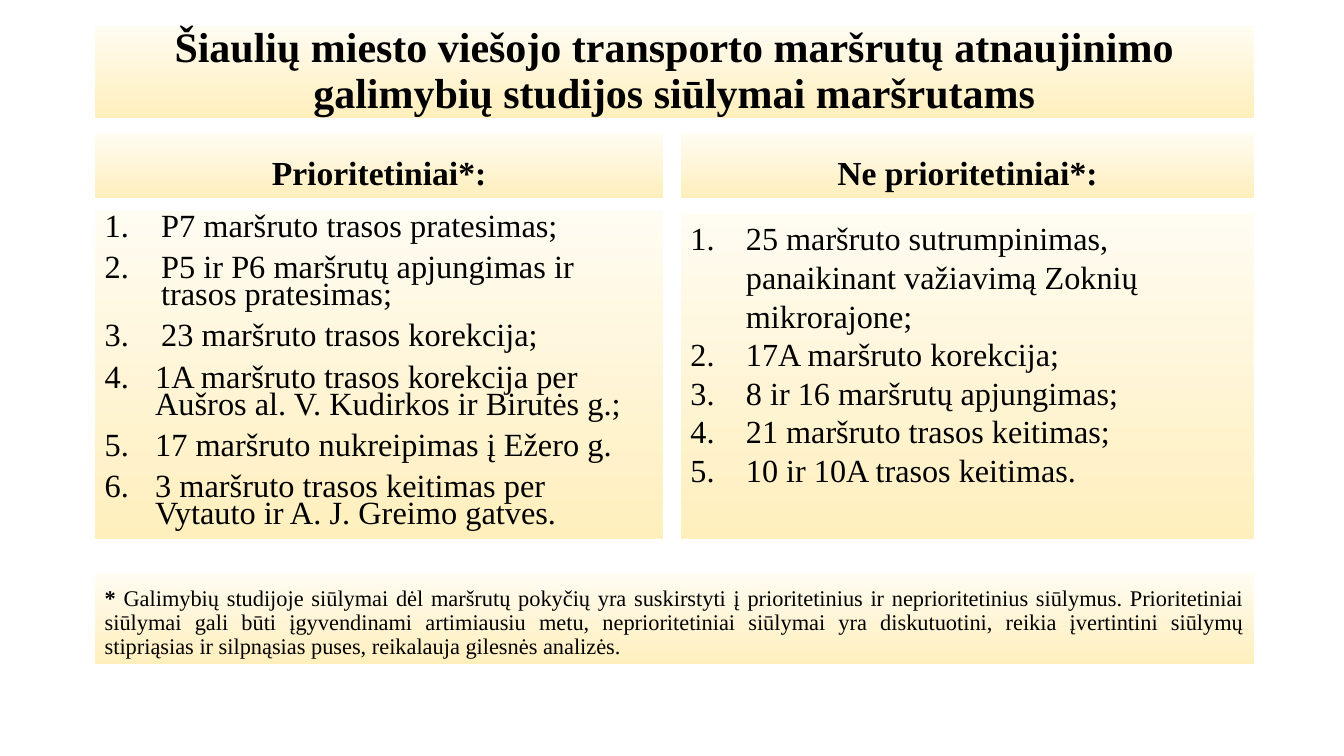
from dataclasses import dataclass

from lxml import etree
from pptx import Presentation
from pptx.dml.color import RGBColor
from pptx.enum.shapes import MSO_SHAPE
from pptx.enum.text import MSO_ANCHOR, MSO_AUTO_SIZE, PP_ALIGN
from pptx.oxml.ns import qn
from pptx.util import Inches, Pt

RECTANGLE = MSO_SHAPE.RECTANGLE
TOP, MIDDLE, BOTTOM = MSO_ANCHOR.TOP, MSO_ANCHOR.MIDDLE, MSO_ANCHOR.BOTTOM
LEFT, CENTER, JUSTIFY = PP_ALIGN.LEFT, PP_ALIGN.CENTER, PP_ALIGN.JUSTIFY
NO_AUTOFIT = MSO_AUTO_SIZE.NONE

TITLE = "Šiaulių miesto viešojo transporto maršrutų atnaujinimo galimybių studijos siūlymai maršrutams"
PRIORITY_HEADING = "Prioritetiniai*:"
PRIORITY_ROUTES = [
    ("P7 maršruto trasos pratesimas;", 0.56),
    ("P5 ir P6 maršrutų apjungimas ir trasos pratesimas;", 0.56),
    ("23 maršruto trasos korekcija;", 0.56),
    ("1A maršruto trasos korekcija per Aušros al. V. Kudirkos ir Birutės g.;", 0.5),
    ("17 maršruto nukreipimas į Ežero g.", 0.5),
    ("3 maršruto trasos keitimas per Vytauto ir A. J. Greimo gatves.", 0.5),
]
OTHER_HEADING = "Ne prioritetiniai*:"
OTHER_ROUTES = [
    ("25 maršruto sutrumpinimas, panaikinant važiavimą Zoknių mikrorajone;", 0.55),
    ("17A maršruto korekcija;", 0.55),
    ("8 ir 16 maršrutų apjungimas;", 0.55),
    ("21 maršruto trasos keitimas;", 0.55),
    ("10 ir 10A trasos keitimas.", 0.55),
]
FOOTNOTE_MARK = "* "
FOOTNOTE = (
    "Galimybių studijoje siūlymai dėl maršrutų pokyčių yra suskirstyti į prioritetinius ir "
    "neprioritetinius siūlymus. Prioritetiniai siūlymai gali būti įgyvendinami artimiausiu metu, "
    "neprioritetiniai siūlymai yra diskutuotini, reikia įvertintini siūlymų stipriąsias ir "
    "silpnąsias puses, reikalauja gilesnės analizės."
)


@dataclass(frozen=True)
class Theme:
    font: str = "Times New Roman"
    text: str = "000000"
    panel_top: str = "FFFCF2"
    panel_bottom: str = "FFEFBD"
    title: float = 30
    heading: float = 24
    priority: float = 23.1
    other: float = 23
    footnote: float = 16


THEME = Theme()


def style_panel(box, area, anchor):
    box.left, box.top, box.width, box.height = map(Inches, area)
    box.fill.gradient()
    box.fill.gradient_angle = 270
    for stop, color in zip(box.fill.gradient_stops, (THEME.panel_top, THEME.panel_bottom)):
        stop.color.rgb = RGBColor.from_string(color)
    box.line.fill.background()
    frame = box.text_frame
    frame.word_wrap = True
    frame.auto_size = NO_AUTOFIT
    frame.vertical_anchor = anchor
    frame.margin_left = frame.margin_right = Inches(0.1)
    frame.margin_top = frame.margin_bottom = Inches(0.05)
    return frame


def add_panel(page, area, anchor):
    box = page.shapes.add_shape(RECTANGLE, *map(Inches, area))
    box.shadow.inherit = False
    return style_panel(box, area, anchor)


def write(para, spans, size, align, line_spacing):
    para.alignment = align
    para.line_spacing = line_spacing
    para.space_before = Pt(0)
    for text, bold in spans:
        span = para.add_run()
        span.text = text
        font = span.font
        font.name, font.size, font.bold = THEME.font, Pt(size), bold
        font.color.rgb = RGBColor.from_string(THEME.text)


def add_routes(page, area, routes, size, line_spacing, gap):
    frame = add_panel(page, area, TOP)
    for index, (route, indent) in enumerate(routes):
        para = frame.add_paragraph() if index else frame.paragraphs[0]
        properties = para._p.get_or_add_pPr()
        properties.set("marL", str(Inches(indent)))
        properties.set("indent", str(-Inches(indent)))
        etree.SubElement(properties, qn("a:buFont"), typeface="+mj-lt")
        etree.SubElement(properties, qn("a:buAutoNum"), type="arabicPeriod")
        write(para, [(route, False)], size, LEFT, line_spacing)
        if index:
            para.space_before = Pt(gap)


def main():
    deck = Presentation()
    deck.slide_width, deck.slide_height = Inches(13.33), Inches(7.5)
    page = deck.slides.add_slide(deck.slide_layouts[5])

    left, right, full_width = 0.94, 6.75, 11.5
    left_width, right_width = 5.64, left + full_width - right

    title = style_panel(page.shapes.title, (left, 0.26, full_width, 0.91), MIDDLE)
    write(title.paragraphs[0], [(TITLE, True)], THEME.title, CENTER, 0.9)

    for heading, x, width in (
        (PRIORITY_HEADING, left, left_width),
        (OTHER_HEADING, right, right_width),
    ):
        frame = add_panel(page, (x, 1.32, width, 0.64), BOTTOM)
        write(frame.paragraphs[0], [(heading, True)], THEME.heading, CENTER, 0.9)

    add_routes(page, (left, 2.09, left_width, 3.26), PRIORITY_ROUTES, THEME.priority, 0.7, 10)
    add_routes(page, (right, 2.12, right_width, 3.23), OTHER_ROUTES, THEME.other, 1.0, 0)

    footnote = add_panel(page, (left, 5.68, full_width, 0.91), BOTTOM)
    spans = [(FOOTNOTE_MARK, True), (FOOTNOTE, False)]
    write(footnote.paragraphs[0], spans, THEME.footnote, JUSTIFY, 0.9)

    deck.save("out.pptx")


if __name__ == "__main__":
    main()
